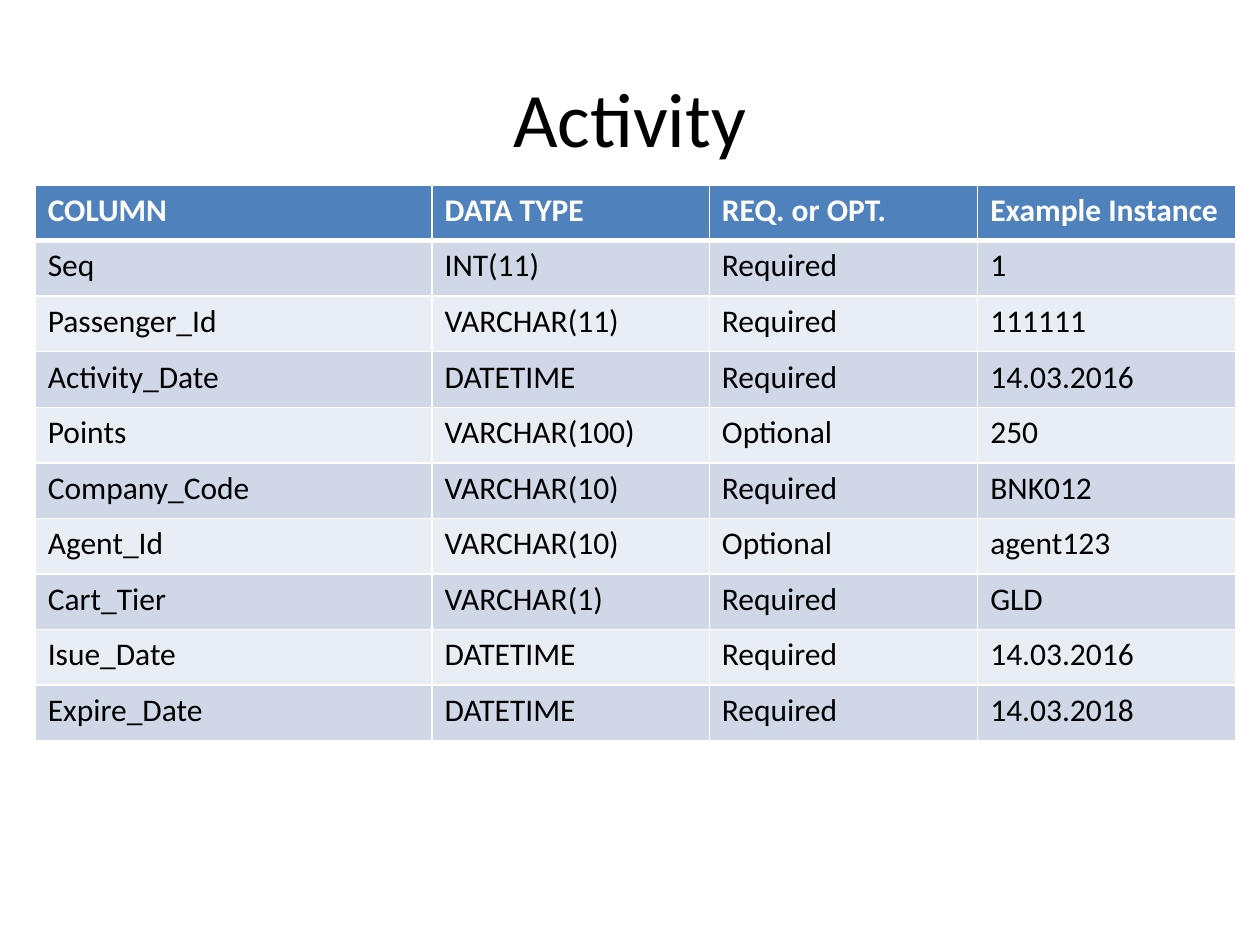
from lxml import etree
from pptx import Presentation
from pptx.dml.color import RGBColor
from pptx.enum.text import MSO_ANCHOR, PP_ALIGN
from pptx.oxml.ns import qn
from pptx.util import Cm, Pt

MIDDLE = MSO_ANCHOR.MIDDLE
CENTER = PP_ALIGN.CENTER
FONT = "Calibri"
BLANK_LAYOUT = 6
COLORS = {
    "text": "000000",
    "header_text": "FFFFFF",
    "header": "4F81BD",
    "odd_row": "D0D8E8",
    "even_row": "E9EDF4",
    "border": "FFFFFF",
}
COLUMN_WIDTHS = [8.0, 5.59, 5.41, 5.21]
ROW_HEIGHT = 1.12
ROWS = [
    ("COLUMN", "DATA TYPE", "REQ. or OPT.", "Example Instance"),
    ("Seq", "INT(11)", "Required", "1"),
    ("Passenger_Id", "VARCHAR(11)", "Required", "111111"),
    ("Activity_Date", "DATETIME", "Required", "14.03.2016"),
    ("Points", "VARCHAR(100)", "Optional", "250"),
    ("Company_Code", "VARCHAR(10)", "Required", "BNK012"),
    ("Agent_Id", "VARCHAR(10)", "Optional", "agent123"),
    ("Cart_Tier", "VARCHAR(1)", "Required", "GLD"),
    ("Isue_Date", "DATETIME", "Required", "14.03.2016"),
    ("Expire_Date", "DATETIME", "Required", "14.03.2018"),
]


def format_text(paragraph, size, color, bold=False):
    for run in paragraph.runs:
        run.font.name = FONT
        run.font.size = Pt(size)
        run.font.bold = bold
        run.font.color.rgb = RGBColor.from_string(COLORS[color])


def add_title(slide, text):
    shape = slide.shapes.add_textbox(Cm(1.27), Cm(0.76), Cm(22.86), Cm(3.18))
    text_frame = shape.text_frame
    text_frame.word_wrap = True
    text_frame.vertical_anchor = MIDDLE
    text_frame.text = text
    paragraph = text_frame.paragraphs[0]
    paragraph.alignment = CENTER
    format_text(paragraph, 44, "text")


def set_borders(cell, top=1, bottom=1):
    """Draw the cell's four borders; call before filling, as the schema orders them."""
    properties = cell._tc.get_or_add_tcPr()
    for side, width in (("L", 1), ("R", 1), ("T", top), ("B", bottom)):
        line = etree.SubElement(properties, qn(f"a:ln{side}"), w=str(Pt(width)))
        fill = etree.SubElement(line, qn("a:solidFill"))
        etree.SubElement(fill, qn("a:srgbClr"), val=COLORS["border"])


def fill_cell(cell, text, row_index):
    is_header = row_index == 0
    set_borders(cell, top=3 if row_index == 1 else 1, bottom=3 if is_header else 1)
    if is_header:
        fill_color = "header"
    else:
        fill_color = "odd_row" if row_index % 2 else "even_row"
    cell.fill.solid()
    cell.fill.fore_color.rgb = RGBColor.from_string(COLORS[fill_color])
    cell.text_frame.text = text
    text_color = "header_text" if is_header else "text"
    format_text(cell.text_frame.paragraphs[0], 18, text_color, bold=is_header)


def add_column_table(slide):
    table = slide.shapes.add_table(
        len(ROWS), len(COLUMN_WIDTHS), Cm(0.71), Cm(3.73),
        Cm(sum(COLUMN_WIDTHS)), Cm(ROW_HEIGHT * len(ROWS)),
    ).table
    for column, width in zip(table.columns, COLUMN_WIDTHS):
        column.width = Cm(width)
    for row_index, values in enumerate(ROWS):
        table.rows[row_index].height = Cm(ROW_HEIGHT)
        for column_index, value in enumerate(values):
            fill_cell(table.cell(row_index, column_index), value, row_index)


def main():
    presentation = Presentation()
    presentation.slide_width = Cm(25.4)
    presentation.slide_height = Cm(19.05)
    slide = presentation.slides.add_slide(presentation.slide_layouts[BLANK_LAYOUT])
    add_title(slide, "Activity")
    add_column_table(slide)
    presentation.save("out.pptx")


if __name__ == "__main__":
    main()
